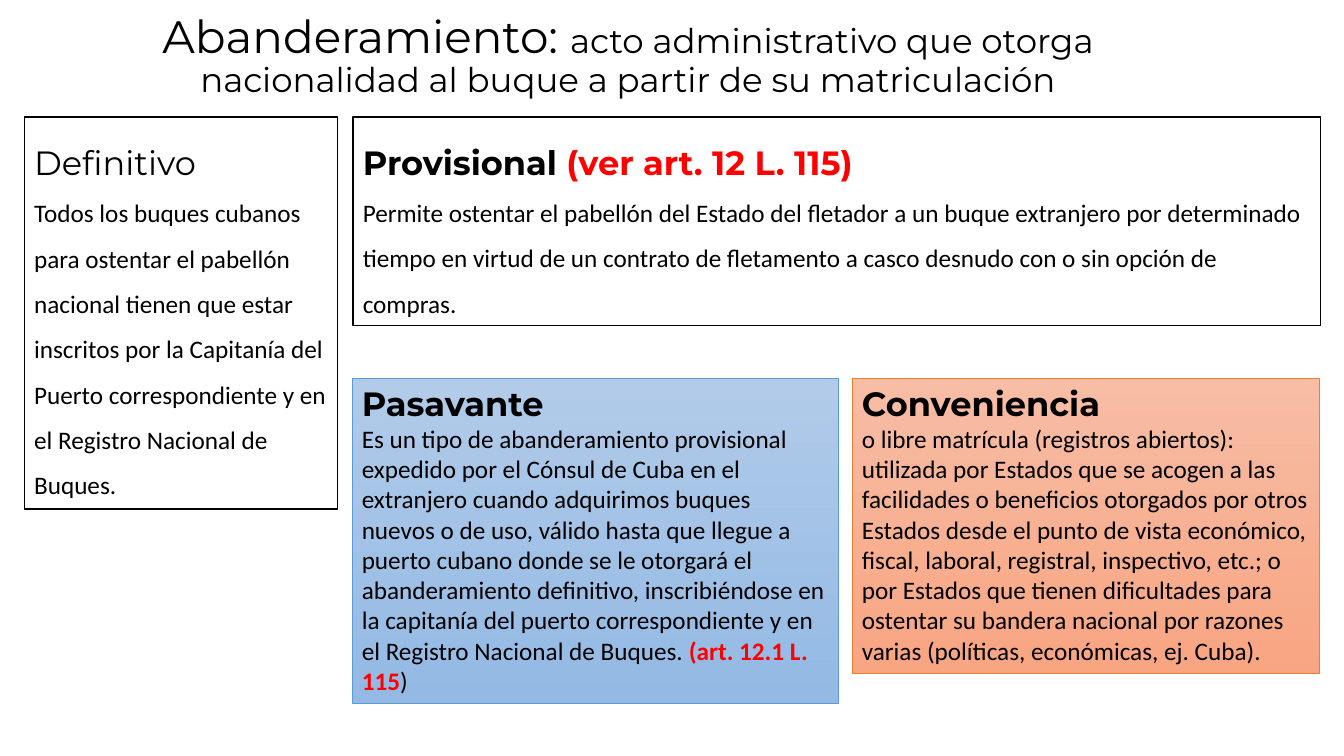
from pptx import Presentation
from pptx.dml.color import RGBColor
from pptx.enum.shapes import MSO_SHAPE
from pptx.enum.text import MSO_ANCHOR, MSO_AUTO_SIZE, PP_ALIGN
from pptx.util import Inches, Pt

COLORS = {
    "black": "000000", "white": "FFFFFF", "red": "FF0000",
    "blue line": "5B9BD5", "blue top": "B1CBE9", "blue bottom": "93B9E4",
    "orange line": "ED7D31", "orange top": "F7BDA5", "orange bottom": "F8A582",
}
HEAD, BODY = ("Montserrat", 24), ("Calibri", 18)

TITLE = [
    ("Abanderamiento: ", "Montserrat", 32.4, "black", False),
    ("acto administrativo que otorga nacionalidad al buque a partir de su matriculación",
     "Montserrat", 24.3, "black", False),
]
TITLE_PLACE = (0.65, 0.16, 11.16, 0.81)

CARDS = [
    {"place": (0.24, 1.16, 3.11, 3.89), "fill": ["white"], "line": ("black", 1), "spacing": 1.5,
     "head": [("Definitivo", *HEAD, "black", False)],
     "body": [("Todos los buques cubanos para ostentar el pabellón nacional tienen que estar "
               "inscritos por la Capitanía del Puerto correspondiente y en el Registro Nacional "
               "de Buques.", *BODY, "black", False)]},
    {"place": (3.5, 1.16, 9.6, 2.07), "fill": ["white"], "line": ("black", 1), "spacing": 1.5,
     "head": [("Provisional ", *HEAD, "black", True),
              ("(ver art. 12 L. 115)", *HEAD, "red", True)],
     "body": [("Permite ostentar el pabellón del Estado del fletador a un buque extranjero por "
               "determinado tiempo en virtud de un contrato de fletamento a casco desnudo con o "
               "sin opción de compras.", *BODY, "black", False)]},
    {"place": (8.45, 3.75, 4.64, 2.93), "fill": ["orange top", "orange bottom"],
     "line": ("orange line", 0.5), "spacing": 1.0,
     "head": [("Conveniencia", *HEAD, "black", True)],
     "body": [("o libre matrícula (registros abiertos): utilizada por Estados que se acogen a "
               "las facilidades o beneficios otorgados por otros Estados desde el punto de vista "
               "económico, fiscal, laboral, registral, inspectivo, etc.; o por Estados que "
               "tienen dificultades para ostentar su bandera nacional por razones varias "
               "(políticas, económicas, ej. Cuba).", *BODY, "black", False)]},
    {"place": (3.49, 3.75, 4.83, 3.23), "fill": ["blue top", "blue bottom"],
     "line": ("blue line", 0.5), "spacing": 1.0,
     "head": [("Pasavante", *HEAD, "black", True)],
     "body": [("Es un tipo de abanderamiento provisional expedido por el Cónsul de Cuba en el "
               "extranjero cuando adquirimos buques nuevos o de uso, válido hasta que llegue a "
               "puerto cubano donde se le otorgará el abanderamiento definitivo, inscribiéndose "
               "en la capitanía del puerto correspondiente y en el Registro Nacional de Buques. ",
               *BODY, "black", False),
              ("(art. 12.1 L. 115", *BODY, "red", True),
              (")", *BODY, "black", False)]},
]


def color(name):
    return RGBColor.from_string(COLORS[name])


def write(para, spans, align, spacing):
    para.alignment = align
    para.line_spacing = spacing
    for text, font, size, ink, bold in spans:
        span = para.add_run()
        span.text = text
        span.font.name = font
        span.font.size = Pt(size)
        span.font.bold = bold
        span.font.color.rgb = color(ink)


def paint(fill, names):
    if len(names) == 1:
        fill.solid()
        fill.fore_color.rgb = color(names[0])
        return
    fill.gradient()
    fill.gradient_angle = 270
    for stop, name in zip(fill.gradient_stops, names):
        stop.color.rgb = color(name)


def add_title(page):
    box = page.shapes.add_textbox(*map(Inches, TITLE_PLACE))
    frame = box.text_frame
    frame.word_wrap = True
    frame.vertical_anchor = MSO_ANCHOR.MIDDLE
    write(frame.paragraphs[0], TITLE, PP_ALIGN.CENTER, 0.9)


def add_card(page, card):
    box = page.shapes.add_shape(MSO_SHAPE.RECTANGLE, *map(Inches, card["place"]))
    box.shadow.inherit = False
    paint(box.fill, card["fill"])
    ink, width = card["line"]
    box.line.color.rgb = color(ink)
    box.line.width = Pt(width)
    frame = box.text_frame
    frame.word_wrap = True
    frame.auto_size = MSO_AUTO_SIZE.SHAPE_TO_FIT_TEXT
    frame.vertical_anchor = MSO_ANCHOR.TOP
    write(frame.paragraphs[0], card["head"], PP_ALIGN.JUSTIFY, card["spacing"])
    write(frame.add_paragraph(), card["body"], PP_ALIGN.LEFT, card["spacing"])


def main():
    """Build the slide on ship flagging and save it."""
    deck = Presentation()
    deck.slide_width, deck.slide_height = Inches(13.33), Inches(7.5)
    page = deck.slides.add_slide(deck.slide_layouts[6])
    add_title(page)
    for card in CARDS:
        add_card(page, card)
    deck.save("out.pptx")


if __name__ == "__main__":
    main()
